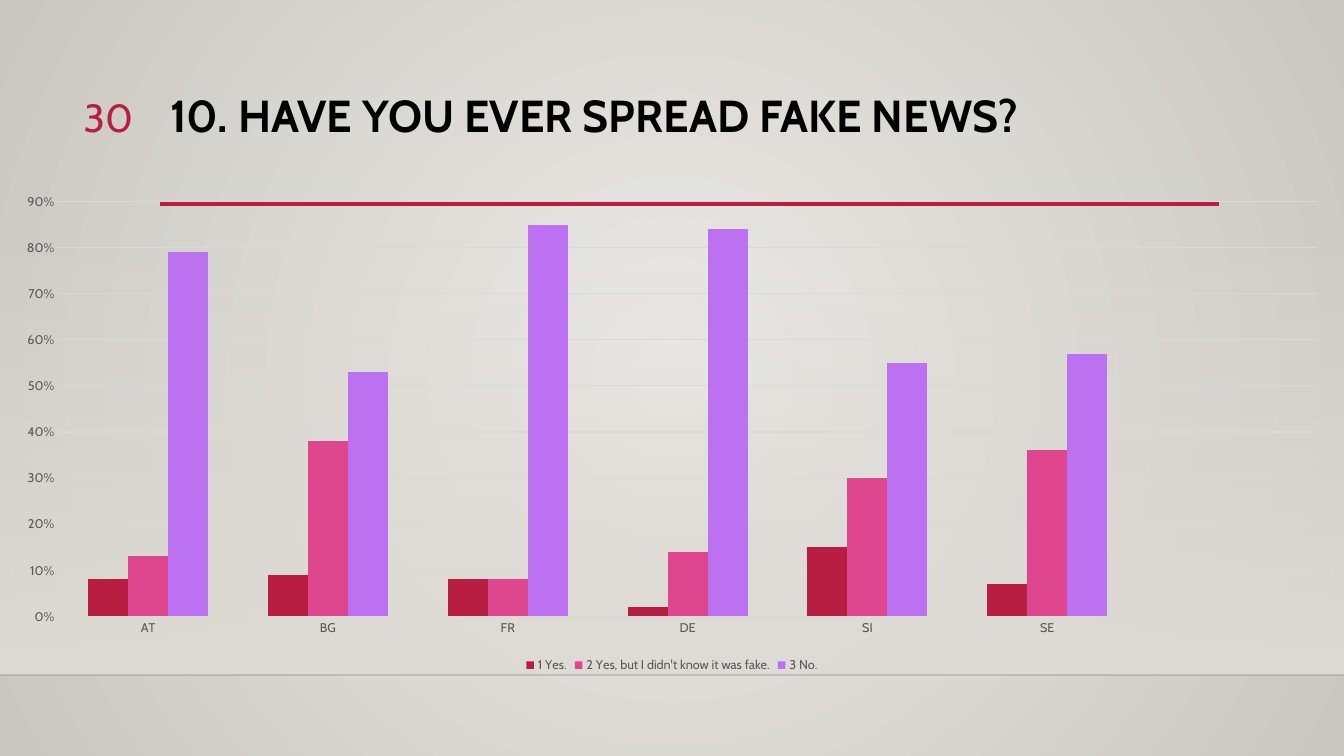
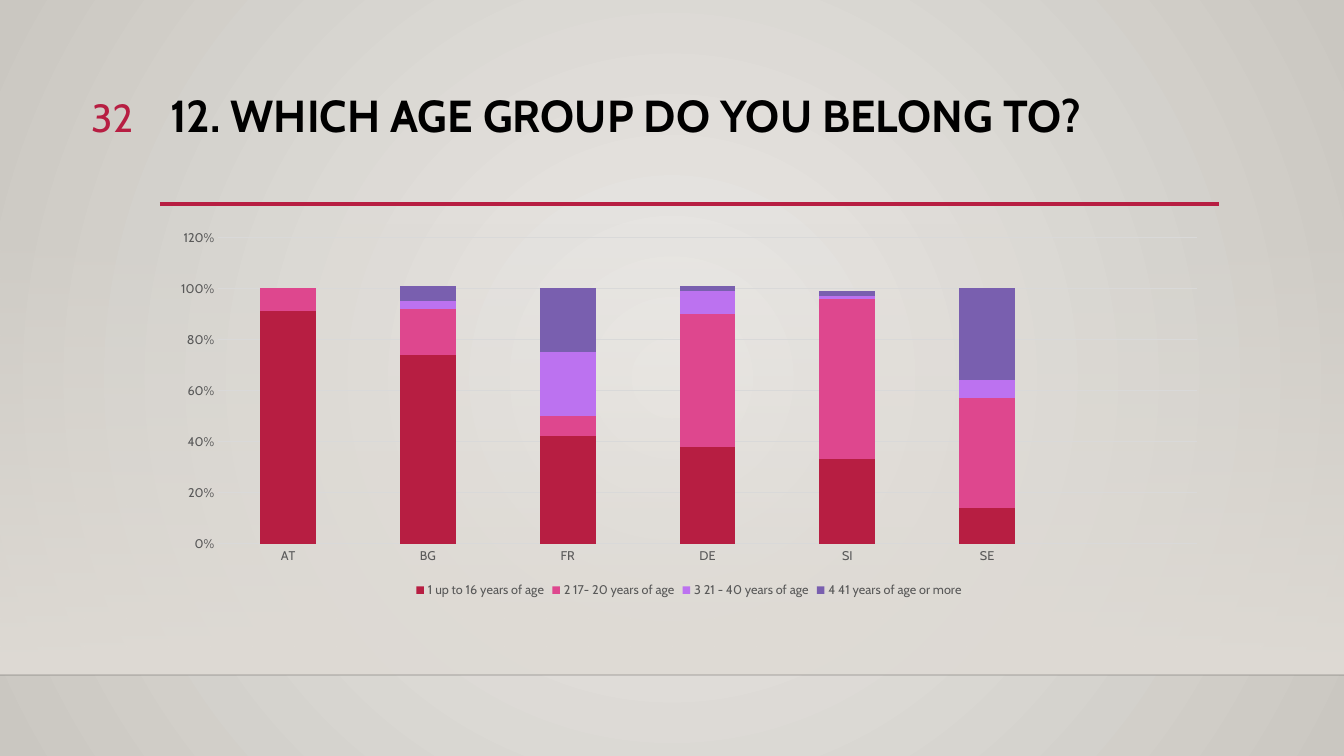
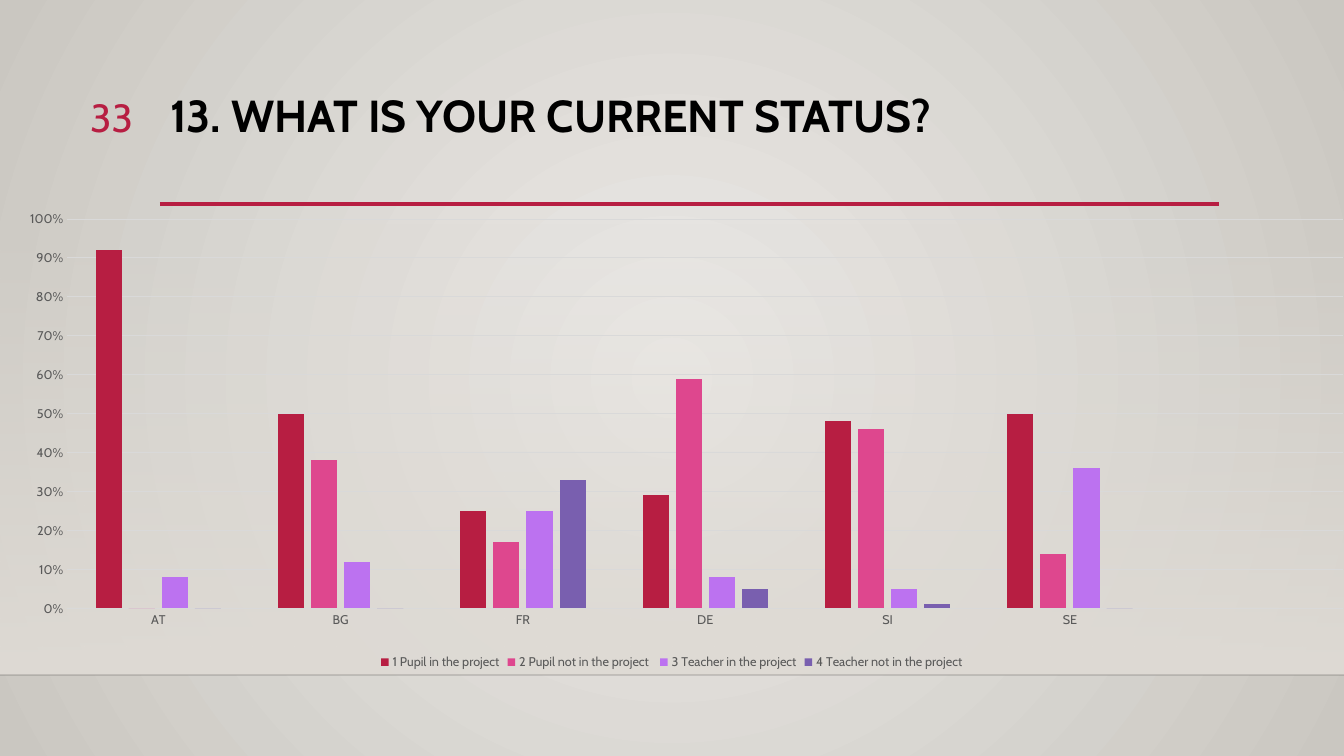
from lxml import etree
from pptx import Presentation
from pptx.chart.data import CategoryChartData
from pptx.dml.color import RGBColor
from pptx.enum.chart import XL_CHART_TYPE as ChartType, XL_LEGEND_POSITION as LegendPosition
from pptx.enum.chart import XL_TICK_MARK as TickMark
from pptx.enum.shapes import MSO_CONNECTOR as Connector, MSO_SHAPE as Shape
from pptx.enum.text import MSO_ANCHOR as Anchor, MSO_AUTO_SIZE as AutoSize, PP_ALIGN as Align
from pptx.oxml import parse_xml
from pptx.oxml.ns import nsdecls, qn
from pptx.util import Pt

# Content
COUNTRIES = ["AT", "BG", "FR", "DE", "SI", "SE", ""]  # the last slot stays empty
QUESTIONS = [
    {
        "number": "30",
        "title": "10. HAVE YOU EVER SPREAD FAKE NEWS?",
        "type": ChartType.COLUMN_CLUSTERED,
        "box": (0, 184, 1344, 493),
        "gap": 150, "overlap": 0, "top": 0.9, "step": 0.1, "base_line": False,
        "answers": [
            ("1 Yes.", (0.08, 0.09, 0.08, 0.02, 0.15, 0.07)),
            ("2 Yes, but I didn't know it was fake.", (0.13, 0.38, 0.08, 0.14, 0.3, 0.36)),
            ("3 No.", (0.79, 0.53, 0.85, 0.84, 0.55, 0.57)),
        ],
    },
    {
        "number": "32",
        "title": "12. WHICH AGE GROUP DO YOU BELONG TO?",
        "type": ChartType.COLUMN_STACKED,
        "box": (160, 222, 1058, 380),
        "gap": 150, "overlap": 100, "top": 1.2, "step": 0.2, "base_line": True,
        "answers": [
            ("1 up to 16 years of age", (0.91, 0.74, 0.42, 0.38, 0.33, 0.14)),
            ("2 17- 20 years of age", (0.09, 0.18, 0.08, 0.52, 0.63, 0.43)),
            ("3 21 - 40 years of age", (0, 0.03, 0.25, 0.09, 0.01, 0.07)),
            ("4 41 years of age or more", (0, 0.06, 0.25, 0.02, 0.02, 0.36)),
        ],
    },
    {
        "number": "33",
        "title": "13. WHAT IS YOUR CURRENT STATUS?",
        "type": ChartType.COLUMN_CLUSTERED,
        "box": (0, 205, 1344, 469),
        "gap": 219, "overlap": -27, "top": 1, "step": 0.1, "base_line": True,
        "plot": {"x": 0.05, "y": 0.03, "w": 0.95, "h": 0.83},
        "answers": [
            ("1 Pupil in the project", (0.92, 0.5, 0.25, 0.29, 0.48, 0.5)),
            ("2 Pupil not in the project ", (0, 0.38, 0.17, 0.59, 0.46, 0.14)),
            ("3 Teacher in the project", (0.08, 0.12, 0.25, 0.08, 0.05, 0.36)),
            ("4 Teacher not in the project", (0, 0, 0.33, 0.05, 0.01, 0)),
        ],
    },
]

# Shared style
COLORS = {
    "center": "ECEAE7", "edge": "CAC7C1", "band": "DFDBD5", "horizon": "000001",
    "accent": "B71E42", "title": "000000", "label": "595959", "grid": "D9D9D9",
}
SERIES_COLORS = ["B71E42", "DE478E", "BC72F0", "795FAF"]
FONT = "Cabin"
EMU_PER_PX = 914400 / 100.8
WIDTH, HEIGHT = 1344, 756
BAND = (0, 223, 1344, 452)
TITLE = (160, 89, 1058, 116)
NUMBER = (53, 88, 90, 55)
RADIAL = '<a:path path="circle"><a:fillToRect l="50000" t="50000" r="50000" b="50000"/></a:path>'
DOWNWARD = '<a:lin ang="5400000" scaled="0"/>'


def px(*lengths):
    return [round(length * EMU_PER_PX) for length in lengths]


def rgb(name):
    return RGBColor.from_string(COLORS.get(name, name))


def style_font(font, size, color, bold=False):
    font.name, font.size, font.bold = FONT, Pt(size), bold
    font.color.rgb = rgb(color)


def set_gradient(fill, element, stops, direction):
    """Stops are (position, colour, opacity), all in percent."""
    fill.gradient()
    stop_xml = "".join(
        f'<a:gs pos="{position * 1000}"><a:srgbClr val="{COLORS[color]}">'
        f'<a:alpha val="{opacity * 1000}"/></a:srgbClr></a:gs>'
        for position, color, opacity in stops)
    gradient = parse_xml(f'<a:gradFill {nsdecls("a")} rotWithShape="1">'
                         f'<a:gsLst>{stop_xml}</a:gsLst>{direction}</a:gradFill>')
    default = element.find(".//" + qn("a:gradFill"))
    default.getparent().replace(default, gradient)


def add_rule(page, left, right, y, color, weight, opacity=100):
    rule = page.shapes.add_connector(Connector.STRAIGHT, *px(left, y, right, y))
    rule.line.color.rgb, rule.line.width = rgb(color), Pt(weight)
    etree.SubElement(rule.element.spPr, qn("a:effectLst"))
    if opacity < 100:
        tint = rule.element.find(".//" + qn("a:srgbClr"))
        etree.SubElement(tint, qn("a:alpha"), val=str(opacity * 1000))
    return rule


def build_layout(deck, layout):
    """Draw the shared parts on a page, then move them to the layout."""
    master = deck.slide_master
    set_gradient(master.background.fill, master.element,
                 [(0, "center", 100), (100, "edge", 100)], RADIAL)
    page = deck.slides[0]
    band = page.shapes.add_shape(Shape.RECTANGLE, *px(*BAND))
    band.shadow.inherit = False
    band.line.fill.background()
    set_gradient(band.fill, band.element, [(0, "band", 0), (100, "band", 100)], DOWNWARD)
    horizon = add_rule(page, 0, WIDTH, 675, "horizon", 1, opacity=20)
    title_rule = add_rule(page, 160, 1219, 204, "accent", 2.5)
    for part in (band, horizon, title_rule):
        layout.shapes.element.append(part.element)


def write(box, place, text, size, color, bold=False, align=Align.LEFT):
    box.left, box.top, box.width, box.height = px(*place)
    frame = box.text_frame
    frame.text = text
    frame.word_wrap, frame.auto_size = True, AutoSize.NONE
    frame.vertical_anchor = Anchor.TOP
    para = frame.paragraphs[0]
    para.alignment = align
    style_font(para.runs[0].font, size, color, bold)
    return para


def style_axes(chart, question):
    for axis in (chart.category_axis, chart.value_axis):
        axis.major_tick_mark = axis.minor_tick_mark = TickMark.NONE
        style_font(axis.tick_labels.font, 9, "label")
        axis.format.line.fill.background()
    if question["base_line"]:
        line = chart.category_axis.format.line
        line.color.rgb, line.width = rgb("grid"), Pt(0.75)
    values = chart.value_axis
    values.minimum_scale, values.maximum_scale = 0, question["top"]
    values.major_unit = question["step"]
    values.tick_labels.number_format = "0%"
    values.tick_labels.number_format_is_linked = False
    grid = values.major_gridlines.format.line
    grid.color.rgb, grid.width = rgb("grid"), Pt(0.75)


def place_plot(chart, plot):
    area = chart.element.find(".//" + qn("c:plotArea"))
    for old in area.findall(qn("c:layout")):
        area.remove(old)
    sizes = "".join(f'<c:{side} val="{share}"/>' for side, share in plot.items())
    area.insert(0, parse_xml(
        f'<c:layout {nsdecls("c")}><c:manualLayout><c:layoutTarget val="inner"/>'
        f'<c:xMode val="edge"/><c:yMode val="edge"/>{sizes}</c:manualLayout></c:layout>'))


def add_answers(page, question):
    data = CategoryChartData(number_format="0%")
    data.categories = COUNTRIES
    for name, shares in question["answers"]:
        data.add_series(name, (*shares, None))
    chart = page.shapes.add_chart(question["type"], *px(*question["box"]), data).chart
    style_font(chart.font, 10, "title")
    chart.has_title = False
    chart.has_legend = True
    chart.legend.position = LegendPosition.BOTTOM
    chart.legend.include_in_layout = False
    style_font(chart.legend.font, 9, "label")
    style_axes(chart, question)
    bars = chart.plots[0]
    bars.vary_by_categories = False
    bars.gap_width, bars.overlap = question["gap"], question["overlap"]
    for series, color in zip(bars.series, SERIES_COLORS):
        series.format.fill.solid()
        series.format.fill.fore_color.rgb = rgb(color)
    if "plot" in question:
        place_plot(chart, question["plot"])


def main():
    deck = Presentation()
    deck.slide_width, deck.slide_height = px(WIDTH, HEIGHT)
    layout = deck.slide_layouts[5]
    for question in QUESTIONS:
        page = deck.slides.add_slide(layout)
        heading = write(page.shapes.title, TITLE, question["title"], 32, "title", bold=True)
        heading.line_spacing = 0.9
        add_answers(page, question)
        number = page.shapes.add_textbox(*px(*NUMBER))
        write(number, NUMBER, question["number"], 28, "accent", align=Align.RIGHT)
    build_layout(deck, layout)
    deck.save("out.pptx")


if __name__ == "__main__":
    main()
